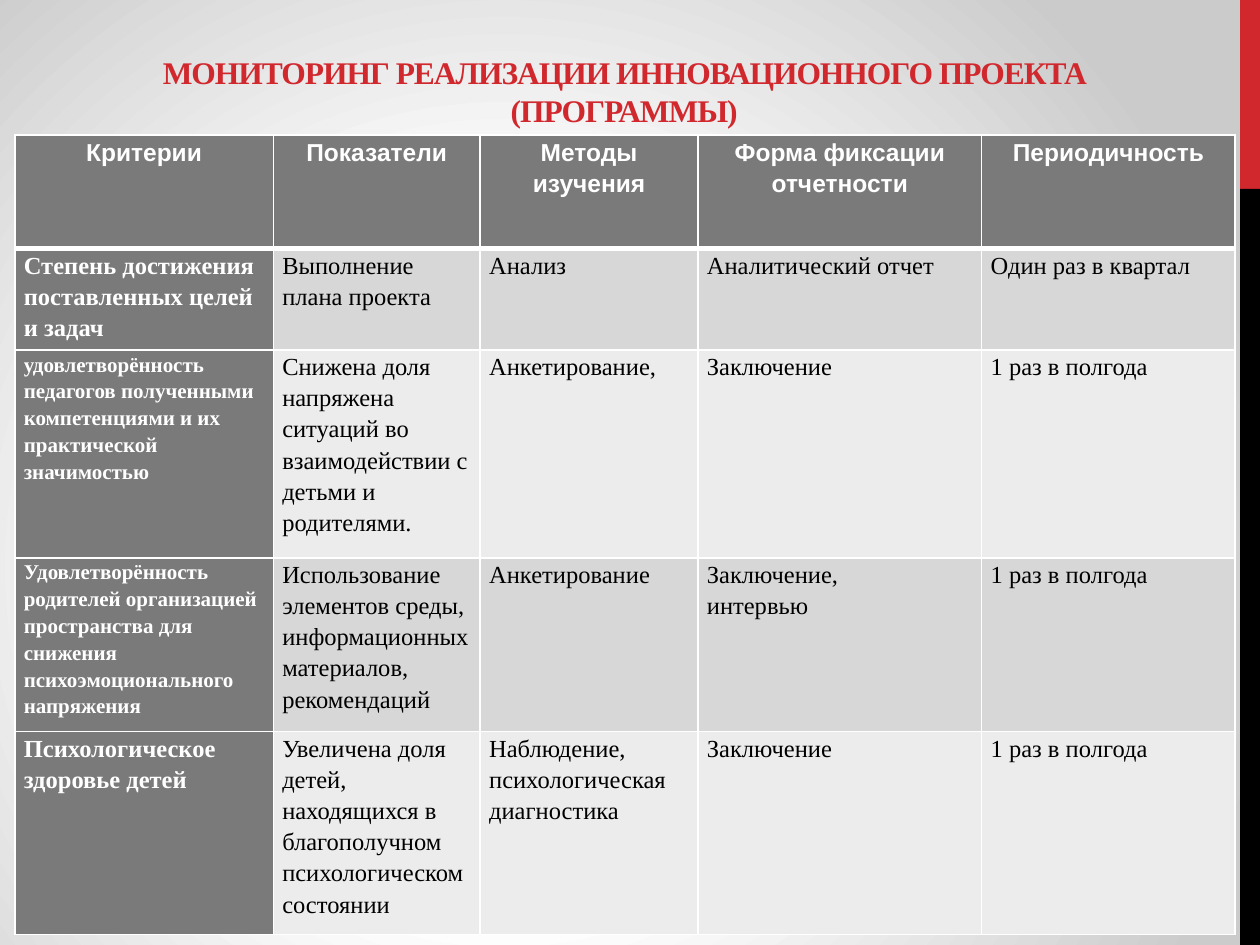
from dataclasses import dataclass

from lxml import etree
from pptx import Presentation
from pptx.dml.color import RGBColor
from pptx.enum.shapes import MSO_SHAPE
from pptx.enum.text import MSO_ANCHOR, PP_ALIGN
from pptx.oxml import parse_xml
from pptx.oxml.ns import nsdecls, qn
from pptx.util import Cm, Pt

RECT = MSO_SHAPE.RECTANGLE
BOTTOM = MSO_ANCHOR.BOTTOM
LEFT, CENTER = PP_ALIGN.LEFT, PP_ALIGN.CENTER
SERIF, SANS = "Times New Roman", "Arial"

COLORS = {
    "red": "D1282E", "black": "000000", "white": "FFFFFF",
    "head": "7A7A7A", "dark": "D7D7D7", "light": "ECECEC", "edge": "CBCBCB",
}
COLS = (5.21, 4.17, 4.39, 5.72, 5.11)
ROWS = (2.29, 1.93, 4.19, 3.35, 3.91)

TITLE = "МОНИТОРИНГ РЕАЛИЗАЦИИ ИННОВАЦИОННОГО ПРОЕКТА (ПРОГРАММЫ)"
DATA = (
    ("Критерии", "Показатели", "Методы изучения",
     "Форма фиксации отчетности", "Периодичность"),
    ("Степень достижения поставленных целей и задач",
     "Выполнение плана проекта", "Анализ", "Аналитический отчет",
     "Один раз в квартал"),
    ("удовлетворённость педагогов полученными компетенциями и их "
     "практической значимостью",
     "Снижена доля напряжена ситуаций во взаимодействии с детьми и "
     "родителями.",
     "Анкетирование,", "Заключение", "1 раз в полгода"),
    ("Удовлетворённость родителей организацией пространства для снижения "
     "психоэмоционального напряжения",
     "Использование элементов среды, информационных материалов, "
     "рекомендаций",
     "Анкетирование", "Заключение,\nинтервью", "1 раз в полгода"),
    ("Психологическое здоровье детей",
     "Увеличена доля детей, находящихся в благополучном психологическом "
     "состоянии",
     "Наблюдение, психологическая диагностика", "Заключение",
     "1 раз в полгода"),
)
SMALL = (2, 3)  # rows whose first cell has smaller text


@dataclass
class Bar:
    top: float
    height: float
    color: str


@dataclass
class Look:
    fill: str
    color: str = "black"
    font: str = SERIF
    size: int = 14
    bold: bool = False
    align: PP_ALIGN = LEFT
    pad: float = 0.18
    after: int = 0


BARS = (Bar(0, 3.81, "red"), Bar(3.81, 15.24, "black"))


def rgb(name: str) -> RGBColor:
    return RGBColor.from_string(COLORS[name])


def style(frame, look: Look) -> None:
    for para in frame.paragraphs:
        para.alignment = look.align
        for run in para.runs:
            font = run.font
            font.name, font.size, font.bold = look.font, Pt(look.size), look.bold
            font.color.rgb = rgb(look.color)


def paint_back(slide) -> None:
    slide.background.fill.gradient()
    old = slide.element.find(".//" + qn("a:gradFill"))
    stops = "".join(
        f'<a:gs pos="{pos * 1000}"><a:srgbClr val="{COLORS[name]}"/></a:gs>'
        for pos, name in ((0, "white"), (44, "white"), (100, "edge")))
    new = parse_xml(
        f'<a:gradFill {nsdecls("a")} rotWithShape="1"><a:gsLst>{stops}</a:gsLst>'
        '<a:path path="circle"><a:fillToRect l="40000" t="60000" r="60000" '
        'b="40000"/></a:path></a:gradFill>')
    old.getparent().replace(old, new)


def draw_bar(slide, bar: Bar) -> None:
    shape = slide.shapes.add_shape(
        RECT, Cm(25), Cm(bar.top), Cm(0.4), Cm(bar.height))
    shape.shadow.inherit = False
    shape.fill.solid()
    shape.fill.fore_color.rgb = rgb(bar.color)
    shape.line.fill.background()


def draw_title(slide) -> None:
    box = slide.shapes.add_textbox(Cm(0.89), Cm(0.33), Cm(23.39), Cm(2.39))
    frame = box.text_frame
    frame.word_wrap = True
    frame.vertical_anchor = BOTTOM
    frame.text = TITLE
    style(frame, Look("", "red", size=18, bold=True, align=CENTER))
    frame.paragraphs[0].runs[0].font._element.set("spc", "-60")


def add_edge(cell, side: str, width: float) -> None:
    props = cell._tc.get_or_add_tcPr()
    line = etree.SubElement(props, qn(f"a:ln{side}"), w=str(Pt(width)))
    fill = etree.SubElement(line, qn("a:solidFill"))
    etree.SubElement(fill, qn("a:srgbClr"), val=COLORS["white"])


def pick_look(row: int, col: int) -> Look:
    if row == 0:
        return Look("head", "white", SANS, bold=True, align=CENTER,
                    pad=0.15, after=6)
    if col == 0:
        return Look("head", "white", size=12 if row in SMALL else 14, bold=True)
    return Look("dark" if row % 2 else "light")


def fill_cell(cell, text: str, row: int, look: Look) -> None:
    cell.margin_left = cell.margin_right = Cm(look.pad)
    cell.margin_top = cell.margin_bottom = 0
    thick = {"T": row == 1, "B": row == 0}
    for side in "LRTB":
        add_edge(cell, side, 3 if thick.get(side) else 1)
    cell.fill.solid()
    cell.fill.fore_color.rgb = rgb(look.fill)
    cell.text_frame.text = text
    style(cell.text_frame, look)
    for para in cell.text_frame.paragraphs:
        para.line_spacing = 1.15
        para.space_after = Pt(look.after)


def draw_table(slide) -> None:
    table = slide.shapes.add_table(
        len(ROWS), len(COLS), Cm(0.3), Cm(2.72),
        Cm(sum(COLS)), Cm(sum(ROWS))).table
    for col, width in zip(table.columns, COLS):
        col.width = Cm(width)
    for row, height in zip(table.rows, ROWS):
        row.height = Cm(height)
    for r, texts in enumerate(DATA):
        for c, text in enumerate(texts):
            fill_cell(table.cell(r, c), text, r, pick_look(r, c))


def main() -> None:
    deck = Presentation()
    deck.slide_width, deck.slide_height = Cm(25.4), Cm(19.05)
    slide = deck.slides.add_slide(deck.slide_layouts[6])
    # Background and side bars
    paint_back(slide)
    for bar in BARS:
        draw_bar(slide, bar)
    # Title and table
    draw_title(slide)
    draw_table(slide)
    deck.save("out.pptx")


if __name__ == "__main__":
    main()
